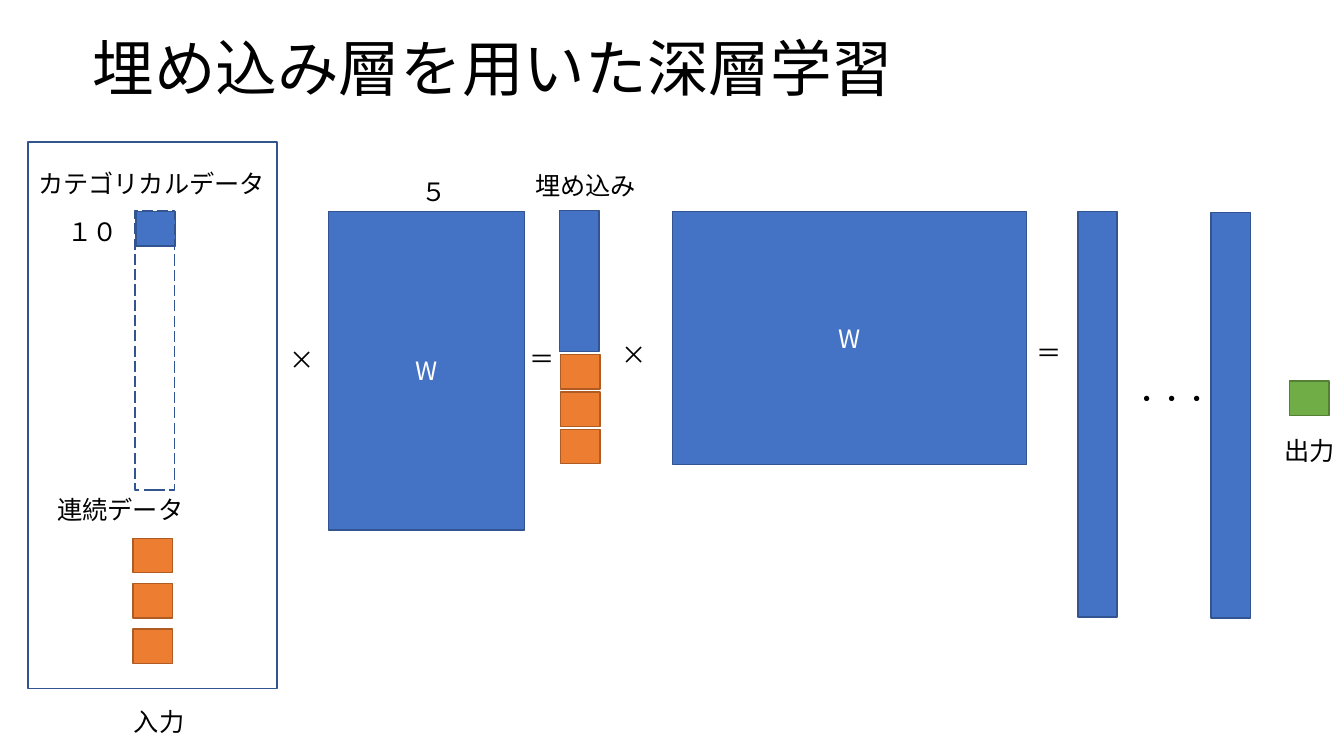
import pptx
import pptx.util
from pptx.dml.color import RGBColor
from pptx.enum.dml import MSO_LINE
from pptx.enum.shapes import MSO_SHAPE
from pptx.enum.text import MSO_ANCHOR, PP_ALIGN
from pptx.oxml.ns import qn
from lxml import etree

PX = 9144  # 100 px to the inch
FONT = "Noto Sans CJK JP"
BLACK = RGBColor(0x00, 0x00, 0x00)
WHITE = RGBColor(0xFF, 0xFF, 0xFF)
BLUE = RGBColor(0x44, 0x72, 0xC4)
BLUE_LINE = RGBColor(0x32, 0x54, 0x91)
ORANGE = RGBColor(0xED, 0x7D, 0x31)
ORANGE_LINE = RGBColor(0xAF, 0x5C, 0x24)
GREEN = RGBColor(0x70, 0xAD, 0x47)
GREEN_LINE = RGBColor(0x53, 0x80, 0x35)

CELL_WIDTH, CELL_HEIGHT = 39, 34

presentation = pptx.Presentation()
presentation.slide_width = 1333 * PX
presentation.slide_height = 750 * PX
slide = presentation.slides.add_slide(presentation.slide_layouts[6])


def write(shape, text, size=18, color=BLACK):
    """Put one paragraph in a shape, with the font set for Japanese too."""
    paragraph = shape.text_frame.paragraphs[0]
    paragraph.text = text
    paragraph.font.size = pptx.util.Pt(size)
    paragraph.font.color.rgb = color
    paragraph.font.name = FONT
    properties = paragraph._p.find(".//" + qn("a:defRPr"))
    etree.SubElement(properties, qn("a:ea"), typeface=FONT)
    return paragraph


def add_box(left, top, width, height, fill, line):
    box = slide.shapes.add_shape(
        MSO_SHAPE.RECTANGLE, left * PX, top * PX, width * PX, height * PX)
    box.shadow.inherit = False
    if fill is None:
        box.fill.background()
    else:
        box.fill.solid()
        box.fill.fore_color.rgb = fill
    box.line.color.rgb = line
    box.line.width = pptx.util.Pt(1)
    return box


title = slide.shapes.add_textbox(82 * PX, -2 * PX, 1150 * PX, 145 * PX)
title.text_frame.word_wrap = True
title.text_frame.vertical_anchor = MSO_ANCHOR.MIDDLE
write(title, "埋め込み層を用いた深層学習", 44).line_spacing = 0.9

# Input frame, categorical vector and its active cell
add_box(28, 141, 247, 542, None, BLUE_LINE)
add_box(135, 210, CELL_WIDTH, CELL_HEIGHT, BLUE, BLUE_LINE)
category_vector = add_box(134, 209, CELL_WIDTH, 277, None, BLUE_LINE)
category_vector.line.dash_style = MSO_LINE.LONG_DASH

# Weight matrices
for left, width, height in [(326, 194, 316), (667, 351, 251)]:
    matrix = add_box(left, 210, width, height, BLUE, BLUE_LINE)
    matrix.text_frame.vertical_anchor = MSO_ANCHOR.MIDDLE
    write(matrix, "W", color=WHITE).alignment = PP_ALIGN.CENTER

# Embedding and hidden layers
for left, top, height in [(555, 209, 140), (1069, 210, 402), (1201, 211, 402)]:
    add_box(left, top, CELL_WIDTH, height, BLUE, BLUE_LINE)

# Continuous values, in the input and below the embedding
for left, first_top, step in [(132, 534, 45), (556, 352, 37)]:
    for row in range(3):
        add_box(left, first_top + row * step, CELL_WIDTH, CELL_HEIGHT,
                ORANGE, ORANGE_LINE)

add_box(1279, 378, CELL_WIDTH, CELL_HEIGHT, GREEN, GREEN_LINE)

labels = [
    ("カテゴリカルデータ", 28, 162, 253),
    ("１０", 57, 210, 94),
    ("連続データ", 47, 485, 253),
    ("入力", 123, 696, 127),
    ("×", 277, 337, 54),
    ("５", 408, 170, 39),
    ("＝", 515, 336, 54),
    ("埋め込み", 521, 164, 127),
    ("×", 607, 332, 54),
    ("＝", 1018, 330, 54),
    ("・・・", 1115, 375, 117),
    ("出力", 1264, 427, 83),
]
for text, left, top, width in labels:
    label = slide.shapes.add_textbox(left * PX, top * PX, width * PX, 40 * PX)
    label.text_frame.word_wrap = True
    write(label, text)

presentation.save("out.pptx")
